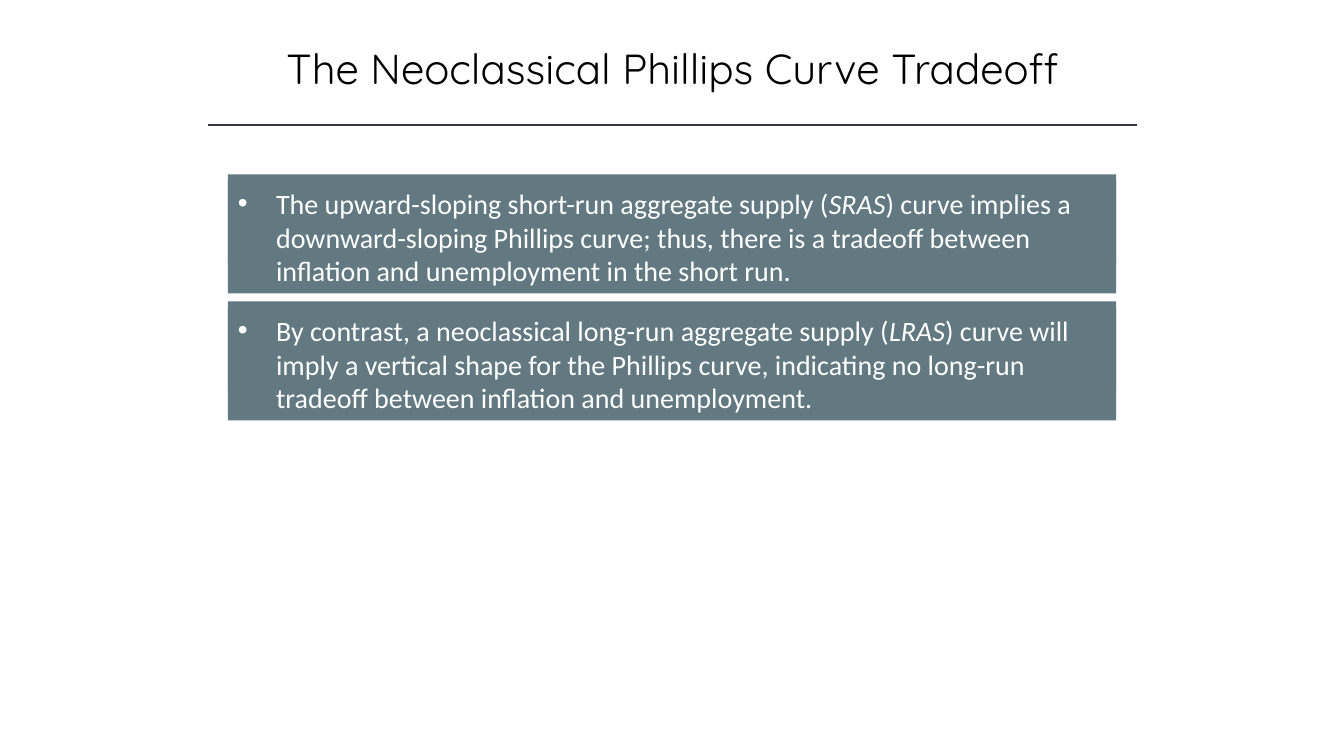
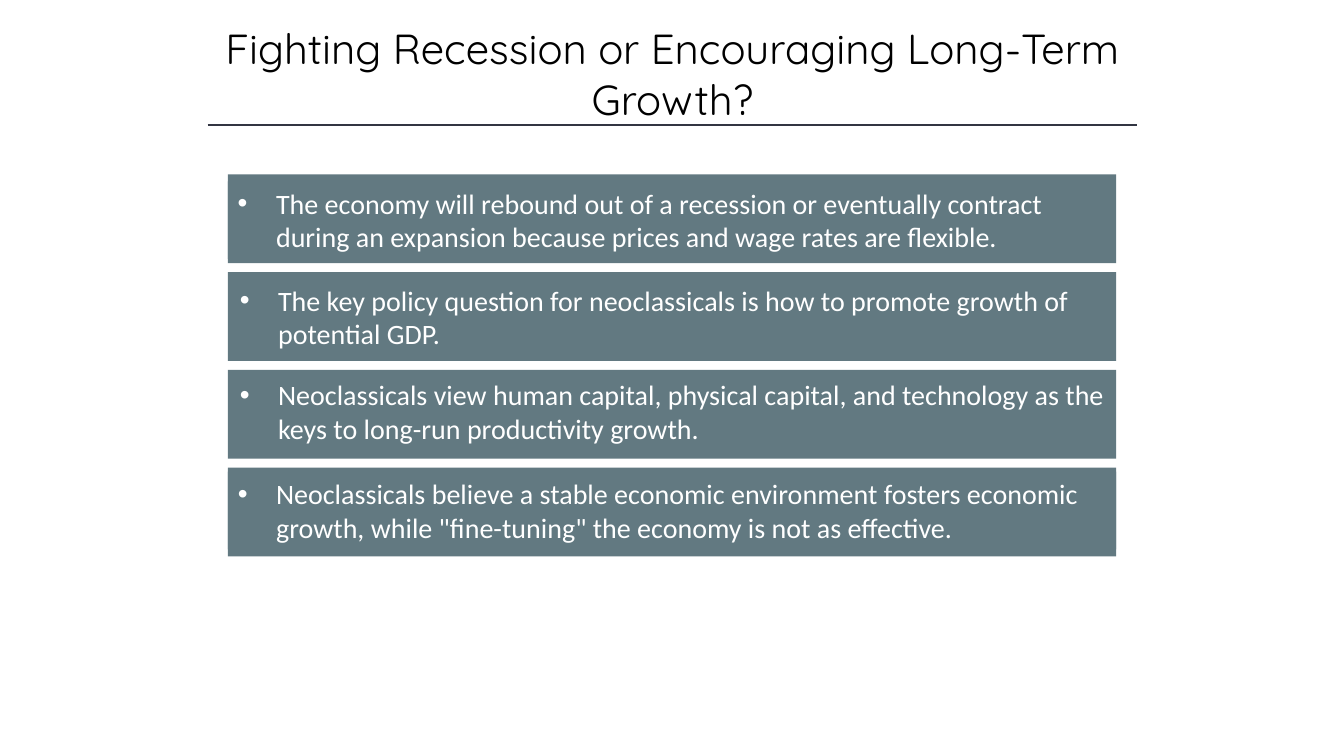
from dataclasses import dataclass

from lxml.etree import SubElement
from pptx import Presentation
from pptx.dml.color import RGBColor as RGB
from pptx.enum.shapes import MSO_CONNECTOR as CONNECTOR, MSO_SHAPE as SHAPE
from pptx.enum.text import MSO_ANCHOR as ANCHOR, MSO_AUTO_SIZE as AUTO_SIZE, PP_ALIGN as ALIGN
from pptx.oxml.ns import qn
from pptx.util import Inches, Pt


@dataclass(frozen=True)
class Theme:
    ink: RGB = RGB(0x00, 0x00, 0x00)
    rule: RGB = RGB(0x32, 0x35, 0x42)
    card: RGB = RGB(0x62, 0x79, 0x81)
    card_text: RGB = RGB(0xFF, 0xFF, 0xFF)
    title_font: str = "Quicksand"
    body_font: str = "Calibri"
    title_size: int = 30
    body_size: int = 20


@dataclass(frozen=True)
class Card:
    """Bulleted card; its text box is placed relative to its band."""
    runs: tuple  # (text, italic) pairs
    lines: int
    dx: float = 0
    dy: float = 0.07
    width: float = 8.81


THEME = Theme()
CARD_LEFT, CARD_TOP, CARD_W, CARD_H = 2.26, 1.73, 8.81, 0.88
LINE_H, CARD_PAD, BULLET_INDENT = 0.34, 0.09, 0.38

SLIDES = [
    dict(
        title="The Neoclassical Phillips Curve Tradeoff",
        title_box=(1.67, 0.37, 10, 0.61),
        pitch=1.26,
        cards=[
            Card((("The upward-sloping short-run aggregate supply (", False),
                  ("SRAS", True),
                  (") curve implies a downward-sloping Phillips curve; thus, there is a "
                   "tradeoff between inflation and unemployment in the short run.", False)), 3),
            Card((("By contrast, a neoclassical long-run aggregate supply (", False),
                  ("LRAS", True),
                  (") curve will imply a vertical shape for the Phillips curve, indicating "
                   "no long-run tradeoff between inflation and unemployment.", False)), 3),
        ],
    ),
    dict(
        title="Fighting Recession or Encouraging Long-Term Growth?",
        title_box=(1.67, 0.17, 10, 1.11),
        pitch=0.97,
        cards=[
            Card((("The economy will rebound out of a recession or eventually contract during "
                   "an expansion because prices and wage rates are flexible.", False),),
                 2, width=8.54),
            Card((("The key policy question for neoclassicals is how to promote growth of "
                   "potential GDP.", False),), 2, dx=0.02, dy=0.06, width=8.5),
            Card((("Neoclassicals view human capital, physical capital, and technology as the "
                   "keys to long-run productivity growth.", False),),
                 2, dx=0.02, dy=0.03, width=8.78),
            Card((("Neoclassicals believe a stable economic environment fosters economic "
                   'growth, while "fine-tuning" the economy is not as effective.', False),),
                 2, dy=0.04),
        ],
    ),
]


def add_run(p, text, font, size, color, italic=False):
    r = p.add_run()
    r.text = text
    r.font.name, r.font.size, r.font.italic = font, Pt(size), italic
    r.font.color.rgb = color


def add_bullet(p):
    pPr = p._p.get_or_add_pPr()
    pPr.set("marL", str(Inches(BULLET_INDENT)))
    pPr.set("indent", str(-Inches(BULLET_INDENT)))
    SubElement(pPr, qn("a:buFont")).set("typeface", "Arial")
    SubElement(pPr, qn("a:buChar")).set("char", "•")


def add_header(s, title, box):
    # Title
    sp = s.shapes.title
    sp.left, sp.top, sp.width, sp.height = map(Inches, box)
    tf = sp.text_frame
    tf.word_wrap = True
    tf.auto_size = AUTO_SIZE.SHAPE_TO_FIT_TEXT
    tf.vertical_anchor = ANCHOR.MIDDLE
    p = tf.paragraphs[0]
    p.alignment = ALIGN.CENTER
    add_run(p, title, THEME.title_font, THEME.title_size, THEME.ink)

    # Rule below the title
    rule = s.shapes.add_connector(CONNECTOR.STRAIGHT, Inches(2.06), Inches(1.24),
                                  Inches(11.28), Inches(1.24))
    rule.line.color.rgb = THEME.rule
    rule.line.width = Pt(1)
    SubElement(rule._element.spPr, qn("a:effectLst"))


def add_block(shapes, left, top, width, height):
    sp = shapes.add_shape(SHAPE.RECTANGLE, *map(Inches, (left, top, width, height)))
    sp.shadow.inherit = False
    sp.fill.solid()
    sp.fill.fore_color.rgb = THEME.card
    sp.line.fill.background()
    return sp


def add_card(s, card, left, top):
    # Band and text box, grouped
    shapes = s.shapes.add_group_shape().shapes
    add_block(shapes, left, top, CARD_W, CARD_H)
    sp = add_block(shapes, left + card.dx, top + card.dy, card.width,
                   card.lines * LINE_H + CARD_PAD)
    tf = sp.text_frame
    tf.word_wrap = True
    tf.auto_size = AUTO_SIZE.SHAPE_TO_FIT_TEXT
    tf.vertical_anchor = ANCHOR.TOP
    p = tf.paragraphs[0]
    p.alignment = ALIGN.LEFT
    add_bullet(p)
    for text, italic in card.runs:
        add_run(p, text, THEME.body_font, THEME.body_size, THEME.card_text, italic)


def add_card_slide(prs, title, title_box, pitch, cards):
    s = prs.slides.add_slide(prs.slide_layouts.get_by_name("Title Only"))
    add_header(s, title, title_box)
    for i, card in enumerate(cards):
        add_card(s, card, CARD_LEFT, CARD_TOP + i * pitch)


def main():
    prs = Presentation()
    prs.slide_width, prs.slide_height = Inches(13.33), Inches(7.5)
    for content in SLIDES:
        add_card_slide(prs, **content)
    prs.save("out.pptx")


if __name__ == "__main__":
    main()
